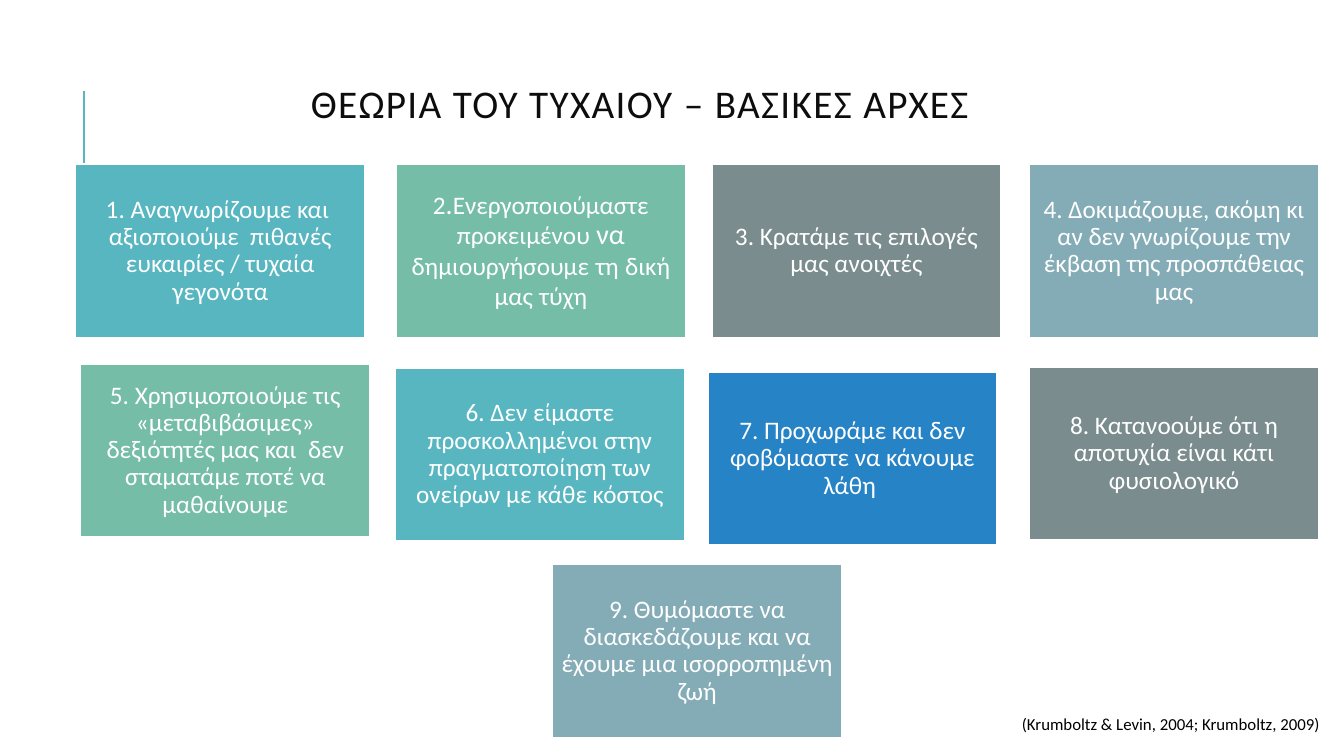
from pptx import Presentation
from pptx.dml.color import RGBColor
from pptx.enum.shapes import MSO_CONNECTOR as Connector, MSO_SHAPE as Shape
from pptx.enum.text import MSO_ANCHOR as Anchor, MSO_AUTO_SIZE as AutoSize, PP_ALIGN as Align
from pptx.oxml.ns import qn
from pptx.util import Inches, Pt
from lxml import etree

COLORS = {
    "teal": "58B6C0", "green": "75BDA7", "gray": "7A8C8E", "steel": "84ACB6",
    "blue": "2683C6", "white": "FFFFFF", "ink": "0D0D0D", "black": "000000",
}
CARD_WIDTH, CARD_HEIGHT = 2.87, 1.72
PRINCIPLES = [
    (0.75, 1.63, "teal", ["1. Αναγνωρίζουμε και  αξιοποιούμε  πιθανές ευκαιρίες / τυχαία γεγονότα"]),
    (3.93, 1.63, "green", ["2", ".", "Ενεργοποιούμαστε", " ", "προκειμένου", " να ", "δημιουργήσουμε",
                           " ", "τη", " ", "δική", " ", "μας", " ", "τύχη"]),
    (7.06, 1.63, "gray", ["3. Κρατάμε τις επιλογές μας ανοιχτές"]),
    (10.21, 1.63, "steel", ["4. Δοκιμάζουμε, ακόμη κι αν δεν γνωρίζουμε την έκβαση της προσπάθειας μας"]),
    (0.8, 3.61, "green", ["5. Χρησιμοποιούμε τις «μεταβιβάσιμες» δεξιότητές μας και  δεν σταματάμε ποτέ να μαθαίνουμε"]),
    (3.92, 3.65, "teal", ["6. Δεν είμαστε προσκολλημένοι στην πραγματοποίηση των ονείρων με κάθε κόστος"]),
    (7.02, 3.69, "blue", ["7. Προχωράμε και δεν φοβόμαστε να κάνουμε λάθη "]),
    (10.21, 3.64, "gray", ["8. Κατανοούμε ότι η αποτυχία είναι κάτι φυσιολογικό"]),
    (5.48, 5.6, "steel", ["9. Θυμόμαστε να διασκεδάζουμε και να έχουμε μια ισορροπημένη ζωή"]),
]


class SlideBuilder:
    """Holds the slide and its style, and adds each kind of element."""

    def __init__(self, slide, font="Calibri"):
        self.slide = slide
        self.font = font

    def color(self, name):
        return RGBColor.from_string(COLORS[name])

    def style(self, run, size, color):
        run.font.name = self.font
        run.font.size = Pt(size)
        run.font.color.rgb = self.color(color)

    def title(self, text, left, top, width, height):
        shape = self.slide.shapes.title
        shape.left, shape.top = Inches(left), Inches(top)
        shape.width, shape.height = Inches(width), Inches(height)
        shape.text_frame.text = text
        shape.text_frame.vertical_anchor = Anchor.MIDDLE
        shape.text_frame.auto_size = AutoSize.NONE
        paragraph = shape.text_frame.paragraphs[0]
        paragraph.alignment = Align.CENTER
        paragraph.line_spacing = 0.8
        run = paragraph.runs[0]
        self.style(run, 28, "ink")
        run.font._element.set("spc", "100")

    def accent_line(self, x, top, bottom):
        line = self.slide.shapes.add_connector(
            Connector.STRAIGHT, Inches(x), Inches(bottom), Inches(x), Inches(top))
        line.line.color.rgb = self.color("teal")
        line.line.width = Pt(1.5)
        etree.SubElement(line._element.spPr, qn("a:effectLst"))

    def card(self, left, top, fill, pieces):
        """Adds a card whose text pieces alternate between 18 and 20 points."""
        shape = self.slide.shapes.add_shape(
            Shape.RECTANGLE, Inches(left), Inches(top), Inches(CARD_WIDTH), Inches(CARD_HEIGHT))
        shape.shadow.inherit = False
        shape.fill.solid()
        shape.fill.fore_color.rgb = self.color(fill)
        shape.line.color.rgb = self.color("white")
        shape.line.width = Pt(1.25)
        frame = shape.text_frame
        frame.word_wrap = True
        frame.vertical_anchor = Anchor.MIDDLE
        frame.margin_left = frame.margin_right = Inches(0.07)
        frame.margin_top = frame.margin_bottom = Inches(0.07)
        paragraph = frame.paragraphs[0]
        paragraph.alignment = Align.CENTER
        paragraph.line_spacing = 0.9
        for index, piece in enumerate(pieces):
            run = paragraph.add_run()
            run.text = piece
            self.style(run, 20 if index % 2 else 18, "white")

    def citation(self, text, left, top, width, height):
        box = self.slide.shapes.add_textbox(Inches(left), Inches(top), Inches(width), Inches(height))
        box.text_frame.text = text
        box.text_frame.word_wrap = True
        box.text_frame.auto_size = AutoSize.SHAPE_TO_FIT_TEXT
        paragraph = box.text_frame.paragraphs[0]
        paragraph.alignment = Align.RIGHT
        self.style(paragraph.runs[0], 12, "black")


def main():
    presentation = Presentation()
    presentation.slide_width, presentation.slide_height = Inches(13.33), Inches(7.5)
    builder = SlideBuilder(presentation.slides.add_slide(presentation.slide_layouts[5]))
    builder.accent_line(0.83, 0.9, 1.9)
    builder.title("ΘΕΩΡΙΑ ΤΟΥ ΤΥΧΑΙΟΥ – ΒΑΣΙΚΕΣ ΑΡΧΕΣ", 1.12, 0.64, 10.46, 0.84)
    for principle in PRINCIPLES:
        builder.card(*principle)
    builder.citation("(Krumboltz & Levin, 2004; Krumboltz, 2009)", 8.46, 7.03, 4.73, 0.3)
    presentation.save("out.pptx")


if __name__ == "__main__":
    main()
